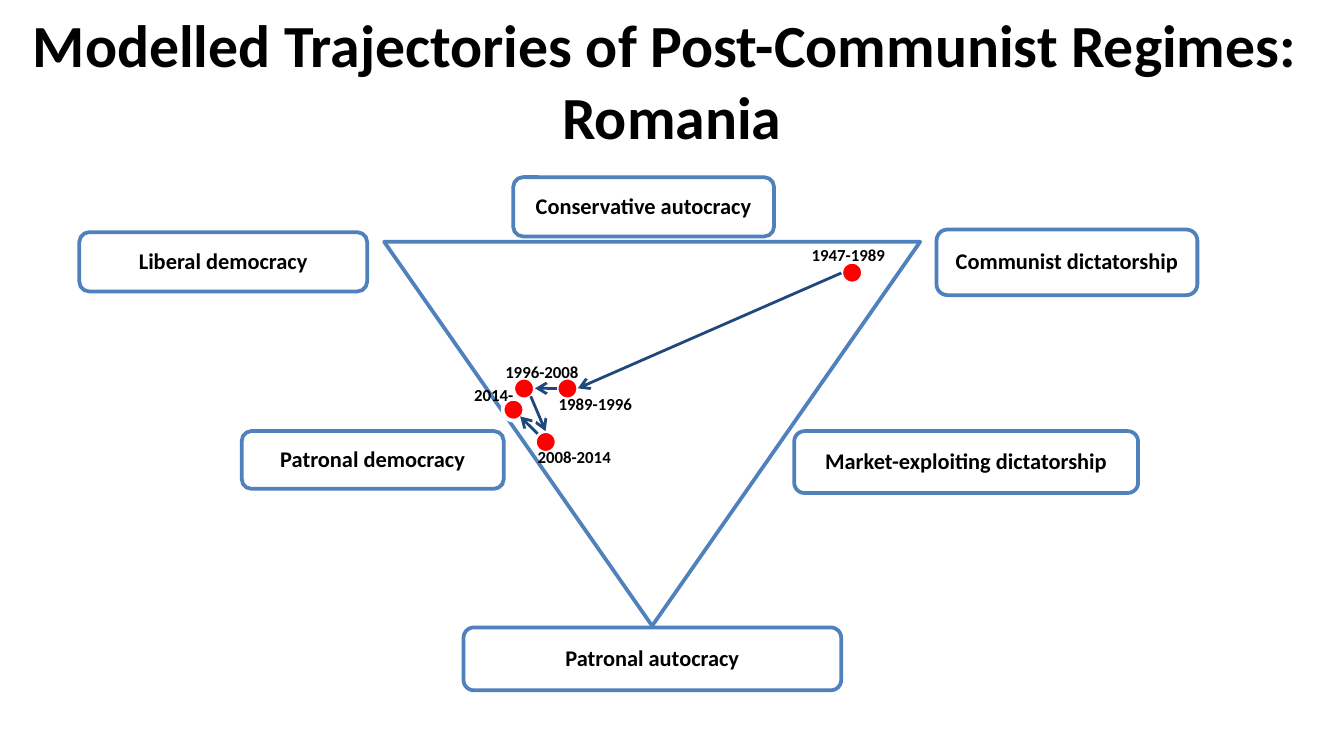
from dataclasses import dataclass

import pptx
import pptx.dml.color
import pptx.enum.shapes
import pptx.enum.text
import pptx.oxml.ns
import pptx.util
from lxml import etree

Cm = pptx.util.Cm
Pt = pptx.util.Pt
RGBColor = pptx.dml.color.RGBColor
MSO_SHAPE = pptx.enum.shapes.MSO_SHAPE
PP_ALIGN = pptx.enum.text.PP_ALIGN
MSO_ANCHOR = pptx.enum.text.MSO_ANCHOR
qn = pptx.oxml.ns.qn

BLACK = RGBColor(0x00, 0x00, 0x00)
WHITE = RGBColor(0xFF, 0xFF, 0xFF)
RED = RGBColor(0xFF, 0x00, 0x00)
FRAME_BLUE = RGBColor(0x4F, 0x81, 0xBD)
ARROW_BLUE = RGBColor(0x1F, 0x49, 0x7D)
DOT_SIZE = 0.41


@dataclass
class Regime:
    name: str
    left: float
    top: float
    width: float
    height: float


@dataclass
class Period:
    years: str
    dot_left: float
    dot_top: float
    label_left: float
    label_top: float


@dataclass
class Move:
    start_x: float
    start_y: float
    end_x: float
    end_y: float


REGIMES = [
    Regime("Communist dictatorship", 17.7, 4.34, 4.93, 1.24),
    Regime("Liberal democracy", 1.5, 4.39, 5.44, 1.12),
    Regime("Patronal autocracy", 8.76, 11.86, 7.14, 1.19),
    Regime("Conservative autocracy", 9.7, 3.35, 4.93, 1.12),
    Regime("Market-exploiting dictatorship", 15.01, 8.15, 6.5, 1.17),
    Regime("Patronal democracy", 4.57, 8.15, 4.95, 1.09),
]
PERIODS = [
    Period("1947-1989", 15.9, 4.95, 15.09, 4.5),
    Period("1989-1996", 10.52, 7.14, 10.31, 7.32),
    Period("1996-2008", 9.7, 7.14, 9.3, 6.71),
    Period("2008-2014", 10.11, 8.15, 9.91, 8.31),
    Period("2014-", 9.5, 7.54, 8.71, 7.14),
]
MOVES = [
    Move(15.9, 5.16, 10.92, 7.34),
    Move(10.52, 7.34, 10.11, 7.34),
    Move(10.03, 7.49, 10.31, 8.15),
    Move(10.16, 8.2, 9.83, 7.87),
]


def write(frame, text: str, size: float, align=PP_ALIGN.CENTER) -> None:
    frame.text = text
    para = frame.paragraphs[0]
    para.alignment = align
    para.font.name = "Calibri"
    para.font.size = Pt(size)
    para.font.bold = True
    para.font.color.rgb = BLACK


def add_outline(page, kind, left: float, top: float, width: float, height: float,
                line_color: RGBColor):
    shape = page.shapes.add_shape(kind, Cm(left), Cm(top), Cm(width), Cm(height))
    shape.shadow.inherit = False
    shape.line.color.rgb = line_color
    shape.line.width = Pt(2)
    return shape


def add_textbox(page, text: str, left: float, top: float, width: float,
                height: float, size: float, align):
    box = page.shapes.add_textbox(Cm(left), Cm(top), Cm(width), Cm(height))
    box.text_frame.word_wrap = True
    write(box.text_frame, text, size, align)
    return box


def draw_regime(page, regime: Regime) -> None:
    box = add_outline(page, MSO_SHAPE.ROUNDED_RECTANGLE, regime.left, regime.top,
                      regime.width, regime.height, FRAME_BLUE)
    box.fill.solid()
    box.fill.fore_color.rgb = WHITE
    fill_color = box.fill._xPr.find(qn("a:solidFill"))[0]
    etree.SubElement(fill_color, qn("a:alpha"), val="90000")
    frame = box.text_frame
    frame.word_wrap = True
    frame.vertical_anchor = MSO_ANCHOR.MIDDLE
    frame.margin_left = frame.margin_right = Cm(0.13)
    frame.margin_top = frame.margin_bottom = Cm(0.13)
    write(frame, regime.name, 12)
    frame.paragraphs[0].line_spacing = 0.9


def draw_dot(page, period: Period) -> None:
    dot = add_outline(page, MSO_SHAPE.OVAL, period.dot_left, period.dot_top,
                      DOT_SIZE, DOT_SIZE, WHITE)
    dot.fill.solid()
    dot.fill.fore_color.rgb = RED


def draw_move(page, move: Move) -> None:
    arrow = page.shapes.add_connector(
        pptx.enum.shapes.MSO_CONNECTOR.STRAIGHT,
        Cm(move.start_x), Cm(move.start_y), Cm(move.end_x), Cm(move.end_y))
    arrow.line.color.rgb = ARROW_BLUE
    arrow.line.width = Pt(1.5)
    etree.SubElement(arrow.line._get_or_add_ln(), qn("a:tailEnd"), type="arrow")
    etree.SubElement(arrow._element.spPr, qn("a:effectLst"))


def draw_label(page, period: Period) -> None:
    add_textbox(page, period.years, period.label_left, period.label_top,
                2.59, 0.64, 9, PP_ALIGN.LEFT)


def main() -> None:
    deck = pptx.Presentation()
    deck.slide_width = Cm(25.4)
    deck.slide_height = Cm(14.29)
    page = deck.slides.add_slide(deck.slide_layouts[6])

    title = add_textbox(
        page, "Modelled Trajectories of Post-Communist Regimes: \vRomania",
        0, 0.53, 25.4, 1.96, 32, PP_ALIGN.CENTER)
    title.text_frame.vertical_anchor = MSO_ANCHOR.MIDDLE

    triangle = add_outline(page, MSO_SHAPE.ISOSCELES_TRIANGLE,
                           7.26, 4.57, 10.13, 7.26, FRAME_BLUE)
    triangle.fill.background()
    triangle.rotation = 180

    for regime in REGIMES:
        draw_regime(page, regime)
    for period in PERIODS:
        draw_dot(page, period)
    for move in MOVES:
        draw_move(page, move)
    for period in PERIODS:
        draw_label(page, period)

    deck.save("out.pptx")


if __name__ == "__main__":
    main()
